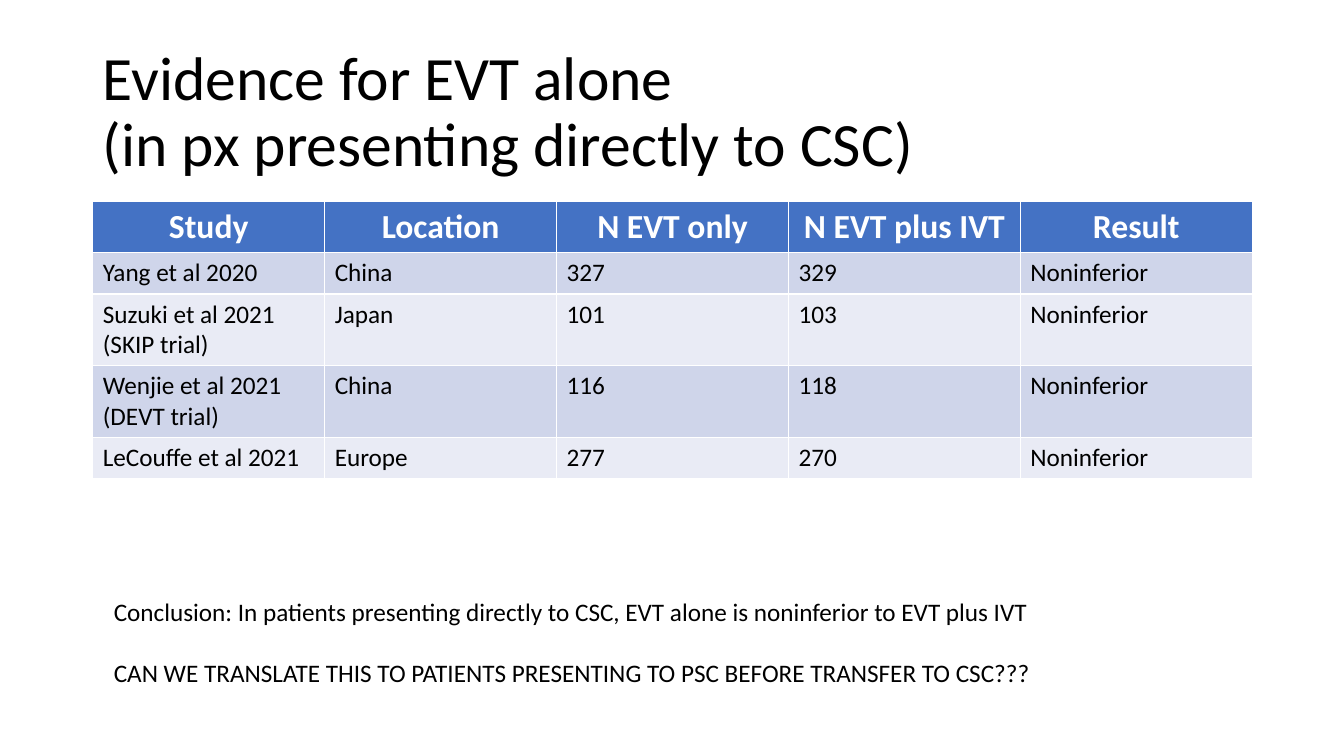
from typing import NamedTuple

from pptx import Presentation
from pptx.dml.color import RGBColor
from pptx.enum.text import MSO_ANCHOR, MSO_AUTO_SIZE, PP_ALIGN
from pptx.slide import Slide
from pptx.table import _Cell
from pptx.text.text import _Paragraph
from pptx.util import Inches, Pt

LEFT, CENTER = PP_ALIGN.LEFT, PP_ALIGN.CENTER
MIDDLE = MSO_ANCHOR.MIDDLE
NO_AUTOFIT, GROW_SHAPE = MSO_AUTO_SIZE.NONE, MSO_AUTO_SIZE.SHAPE_TO_FIT_TEXT

FONT = "Calibri"
BLACK = RGBColor(0x00, 0x00, 0x00)
WHITE = RGBColor(0xFF, 0xFF, 0xFF)
HEADER_BLUE = RGBColor(0x44, 0x72, 0xC4)
BANDS = (RGBColor(0xCF, 0xD5, 0xEA), RGBColor(0xE9, 0xEB, 0xF5))

MARGIN, CONTENT_WIDTH = 0.92, 11.5
ROW_HEIGHT = 0.41


class Study(NamedTuple):
    name: str
    location: str
    evt_only: str
    evt_plus_ivt: str
    result: str = "Noninferior"


HEADINGS = Study("Study", "Location", "N EVT only", "N EVT plus IVT", "Result")
STUDIES = (
    Study("Yang et al 2020", "China", "327", "329"),
    Study("Suzuki et al 2021 (SKIP trial)", "Japan", "101", "103"),
    Study("Wenjie et al 2021 (DEVT trial)", "China", "116", "118"),
    Study("LeCouffe et al 2021", "Europe", "277", "270"),
)
CONCLUSIONS = (
    "Conclusion: In patients presenting directly to CSC, EVT alone is noninferior to EVT plus IVT",
    "CAN WE TRANSLATE THIS TO PATIENTS PRESENTING TO PSC BEFORE TRANSFER TO CSC???",
)


def format_paragraph(paragraph: _Paragraph, size: int, color: RGBColor = BLACK,
                     bold: bool = False, align: PP_ALIGN = LEFT) -> None:
    paragraph.alignment = align
    paragraph.font.name = FONT
    paragraph.font.size = Pt(size)
    paragraph.font.bold = bold
    paragraph.font.color.rgb = color


def fill_cell(cell: _Cell, text: str, fill: RGBColor) -> _Paragraph:
    cell.text = text
    cell.fill.solid()
    cell.fill.fore_color.rgb = fill
    return cell.text_frame.paragraphs[0]


def add_title(slide: Slide) -> None:
    title = slide.shapes.title
    title.left, title.top = Inches(MARGIN), Inches(0.4)
    title.width, title.height = Inches(CONTENT_WIDTH), Inches(1.45)
    frame = title.text_frame
    frame.text = "Evidence for EVT alone\v(in px presenting directly to CSC)"
    frame.auto_size = NO_AUTOFIT
    frame.vertical_anchor = MIDDLE
    heading = frame.paragraphs[0]
    heading.line_spacing = 0.9
    format_paragraph(heading, 44)


def add_studies(slide: Slide) -> None:
    row_count = len(STUDIES) + 1
    table = slide.shapes.add_table(
        row_count, len(HEADINGS), Inches(MARGIN), Inches(2),
        Inches(CONTENT_WIDTH), Inches(ROW_HEIGHT * row_count)).table
    for column, heading in enumerate(HEADINGS):
        label = fill_cell(table.cell(0, column), heading, HEADER_BLUE)
        format_paragraph(label, 24, WHITE, bold=True, align=CENTER)
    for row, study in enumerate(STUDIES, start=1):
        band = BANDS[(row - 1) % len(BANDS)]
        for column, value in enumerate(study):
            format_paragraph(fill_cell(table.cell(row, column), value, band), 18)


def add_conclusions(slide: Slide) -> None:
    frame = slide.shapes.add_textbox(
        Inches(1.03), Inches(5.87), Inches(10.71), Inches(1.01)).text_frame
    frame.word_wrap = True
    frame.auto_size = GROW_SHAPE
    frame.text = "\n".join(CONCLUSIONS)
    for conclusion in frame.paragraphs:
        format_paragraph(conclusion, 18)
    frame.paragraphs[-1].space_before = Pt(22)


def main() -> None:
    deck = Presentation()
    deck.slide_width, deck.slide_height = Inches(13.33), Inches(7.5)
    slide = deck.slides.add_slide(deck.slide_layouts.get_by_name("Title Only"))
    add_title(slide)
    add_studies(slide)
    add_conclusions(slide)
    deck.save("out.pptx")


if __name__ == "__main__":
    main()
